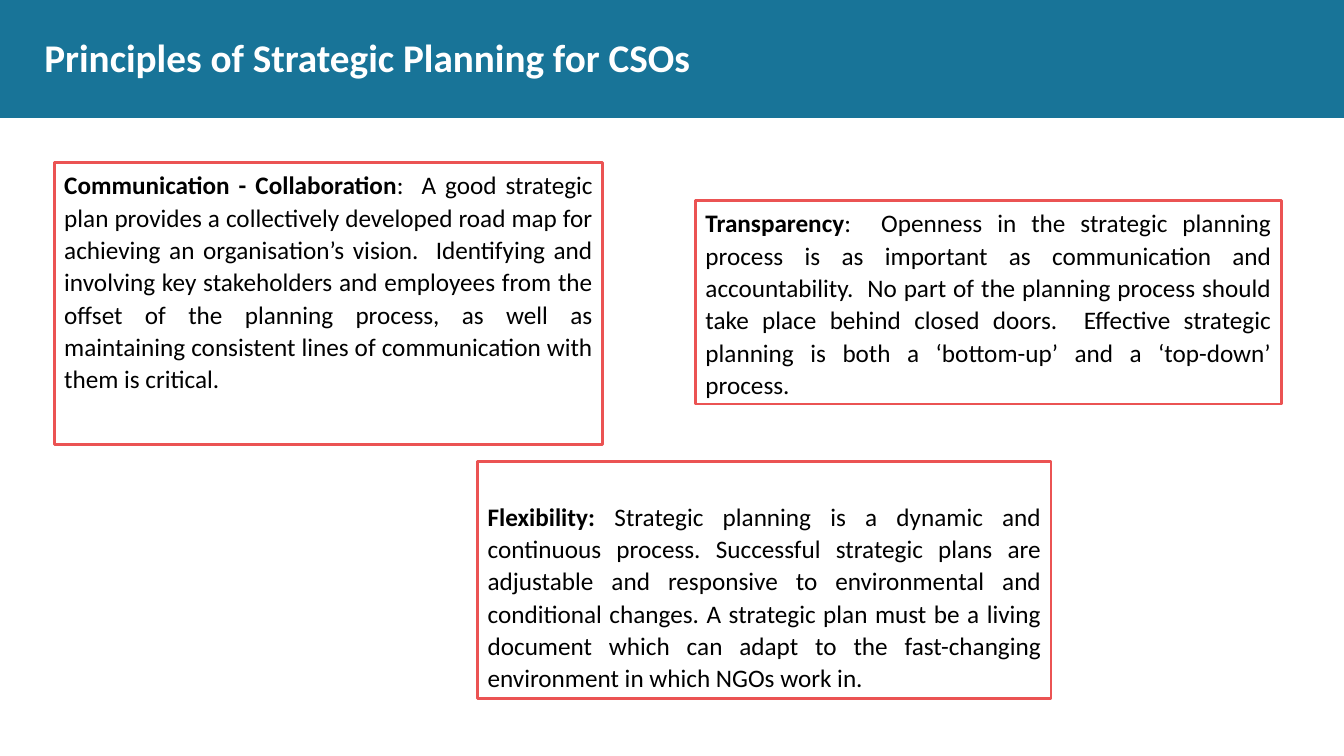
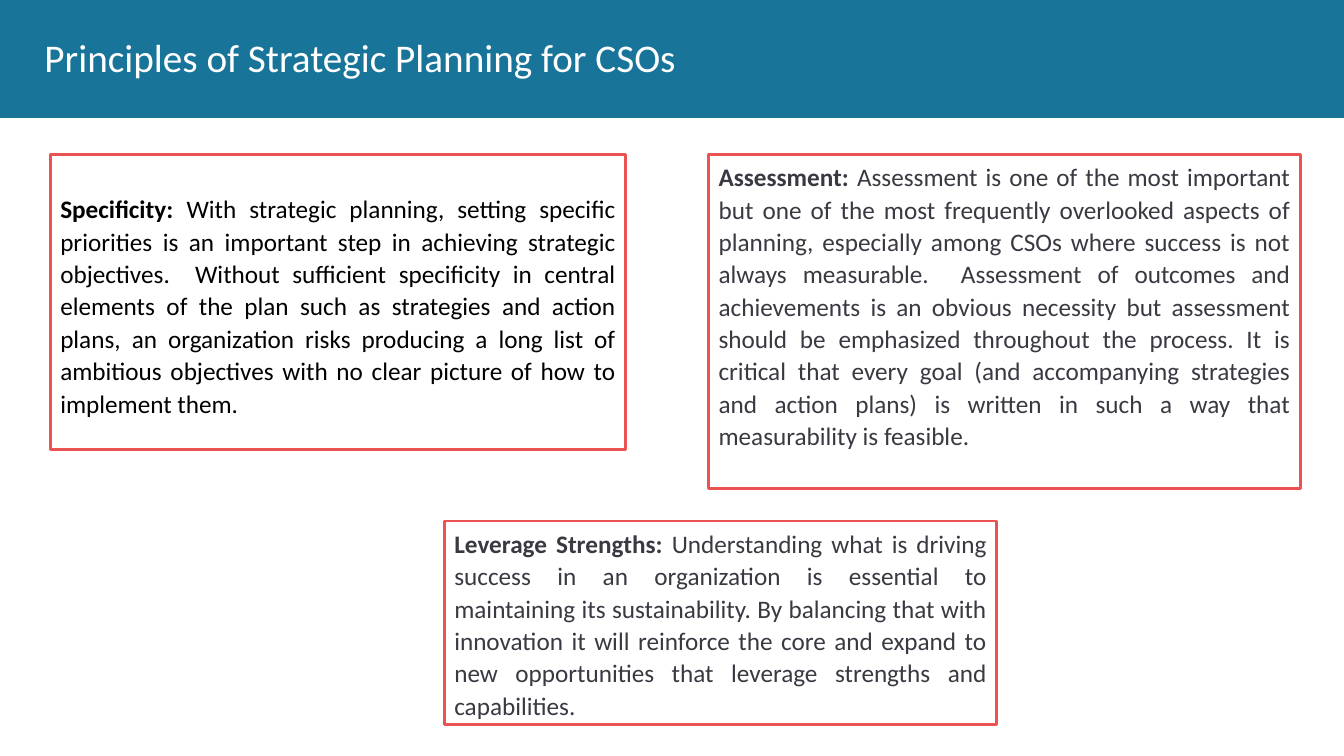
from dataclasses import dataclass

import pptx
import pptx.dml.color
import pptx.enum.shapes
import pptx.enum.text
import pptx.presentation
import pptx.slide
import pptx.text.text
import pptx.util

Cm = pptx.util.Cm
Pt = pptx.util.Pt
RGBColor = pptx.dml.color.RGBColor
Align = pptx.enum.text.PP_ALIGN
Anchor = pptx.enum.text.MSO_ANCHOR
Kind = pptx.enum.shapes.MSO_SHAPE

TEAL = RGBColor(0x18, 0x74, 0x98)
CORAL = RGBColor(0xEB, 0x53, 0x53)
WHITE = RGBColor(0xFF, 0xFF, 0xFF)
BLACK = RGBColor(0x00, 0x00, 0x00)
SLATE = RGBColor(0x3B, 0x38, 0x42)

FONT = "Calibri"
TITLE = "Principles of Strategic Planning for CSOs"
WIDE, HIGH = Cm(33.87), Cm(19.05)
BAND = Cm(2.97)
PAD = Cm(0.13)
LOW = Cm(0.94)  # top inset that starts the text one line lower


@dataclass(frozen=True)
class Card:
    left: float
    top: float
    width: float
    height: float
    head: str
    body: str
    ink: RGBColor = BLACK
    inset: int = PAD


@dataclass(frozen=True)
class Page:
    bold: bool
    cards: tuple[Card, ...]


PAGES = (
    Page(True, (
        Card(1.37, 4.09, 13.82, 7.11, "Communication - Collaboration",
             ":  A good strategic plan provides a collectively developed road map "
             "for achieving an organisation’s vision.  Identifying and involving "
             "key stakeholders and employees from the offset of the planning "
             "process, as well as maintaining consistent lines of communication "
             "with them is critical."),
        Card(17.53, 5.05, 14.76, 5.13, "Transparency",
             ":  Openness in the strategic planning process is as important as "
             "communication and accountability.  No part of the planning process "
             "should take place behind closed doors.  Effective strategic "
             "planning is both a ‘bottom-up’ and a ‘top-down’ process."),
        Card(12.04, 11.63, 14.45, 5.97, "Flexibility: ",
             "Strategic planning is a dynamic and continuous process. Successful "
             "strategic plans are adjustable and responsive to environmental and "
             "conditional changes. A strategic plan must be a living document "
             "which can adapt to the fast-changing environment in which NGOs "
             "work in.", inset=LOW),
    )),
    Page(False, (
        Card(1.27, 3.89, 14.5, 7.44, "Specificity: ",
             "With strategic planning, setting specific priorities is an "
             "important step in achieving strategic objectives.  Without "
             "sufficient specificity in central elements of the plan such as "
             "strategies and action plans, an organization risks producing a "
             "long list of ambitious objectives with no clear picture of how to "
             "implement them.", inset=LOW),
        Card(17.86, 3.89, 14.91, 8.43, "Assessment: ",
             "Assessment is one of the most important but one of the most "
             "frequently overlooked aspects of planning, especially among CSOs "
             "where success is not always measurable.  Assessment of outcomes "
             "and achievements is an obvious necessity but assessment should be "
             "emphasized throughout the process. It is critical that every goal "
             "(and accompanying strategies and action plans) is written in such "
             "a way that measurability is feasible.", SLATE),
        Card(11.2, 13.13, 13.92, 5.13, "Leverage Strengths: ",
             "Understanding what is driving success in an organization is "
             "essential to maintaining its sustainability. By balancing that "
             "with innovation it will reinforce the core and expand to new "
             "opportunities that leverage strengths and capabilities.", SLATE),
    )),
)


def add_run(para: pptx.text.text._Paragraph, text: str, size: int,
            ink: RGBColor, bold: bool) -> None:
    run = para.add_run()
    run.text = text
    run.font.name = FONT
    run.font.size = Pt(size)
    run.font.bold = bold
    run.font.color.rgb = ink


def set_frame(frame: pptx.text.text.TextFrame, anchor: Anchor,
              side: int, top: int, base: int) -> None:
    frame.word_wrap = True
    frame.auto_size = pptx.enum.text.MSO_AUTO_SIZE.NONE
    frame.vertical_anchor = anchor
    frame.margin_left = frame.margin_right = side
    frame.margin_top, frame.margin_bottom = top, base


def add_band(slide: pptx.slide.Slide) -> None:
    """Draw the title band and move it to the back of the slide's layout."""
    band = slide.shapes.add_shape(Kind.RECTANGLE, 0, 0, WIDE, BAND)
    band.shadow.inherit = False
    band.fill.solid()
    band.fill.fore_color.rgb = TEAL
    band.line.fill.background()
    slide.slide_layout.shapes.element.insert(2, band.element)


def set_title(slide: pptx.slide.Slide, bold: bool) -> None:
    title = slide.shapes.title
    title.left, title.top = Cm(1.12), Cm(0.48)
    title.width, title.height = Cm(31.65), Cm(1.88)
    set_frame(title.text_frame, Anchor.MIDDLE, 0, 0, 0)
    para = title.text_frame.paragraphs[0]
    para.alignment = Align.LEFT
    add_run(para, TITLE, 28, WHITE, bold)


def add_card(slide: pptx.slide.Slide, card: Card) -> None:
    box = slide.shapes.add_shape(
        Kind.RECTANGLE, Cm(card.left), Cm(card.top),
        Cm(card.width), Cm(card.height))
    box.shadow.inherit = False
    box.fill.solid()
    box.fill.fore_color.rgb = WHITE
    box.line.color.rgb = CORAL
    box.line.width = Pt(2)
    set_frame(box.text_frame, Anchor.TOP, Cm(0.25), card.inset, PAD)
    para = box.text_frame.paragraphs[0]
    para.alignment = Align.JUSTIFY
    para.line_spacing = 1.07
    add_run(para, card.head, 18, card.ink, True)
    add_run(para, card.body, 18, card.ink, False)


def main() -> None:
    deck = pptx.Presentation()
    deck.slide_width, deck.slide_height = WIDE, HIGH
    plain = deck.slide_layouts.get_by_name("Title Only")
    for page in PAGES:
        slide = deck.slides.add_slide(plain)
        set_title(slide, page.bold)
        for card in page.cards:
            add_card(slide, card)
    add_band(deck.slides[0])
    deck.save("out.pptx")


if __name__ == "__main__":
    main()
